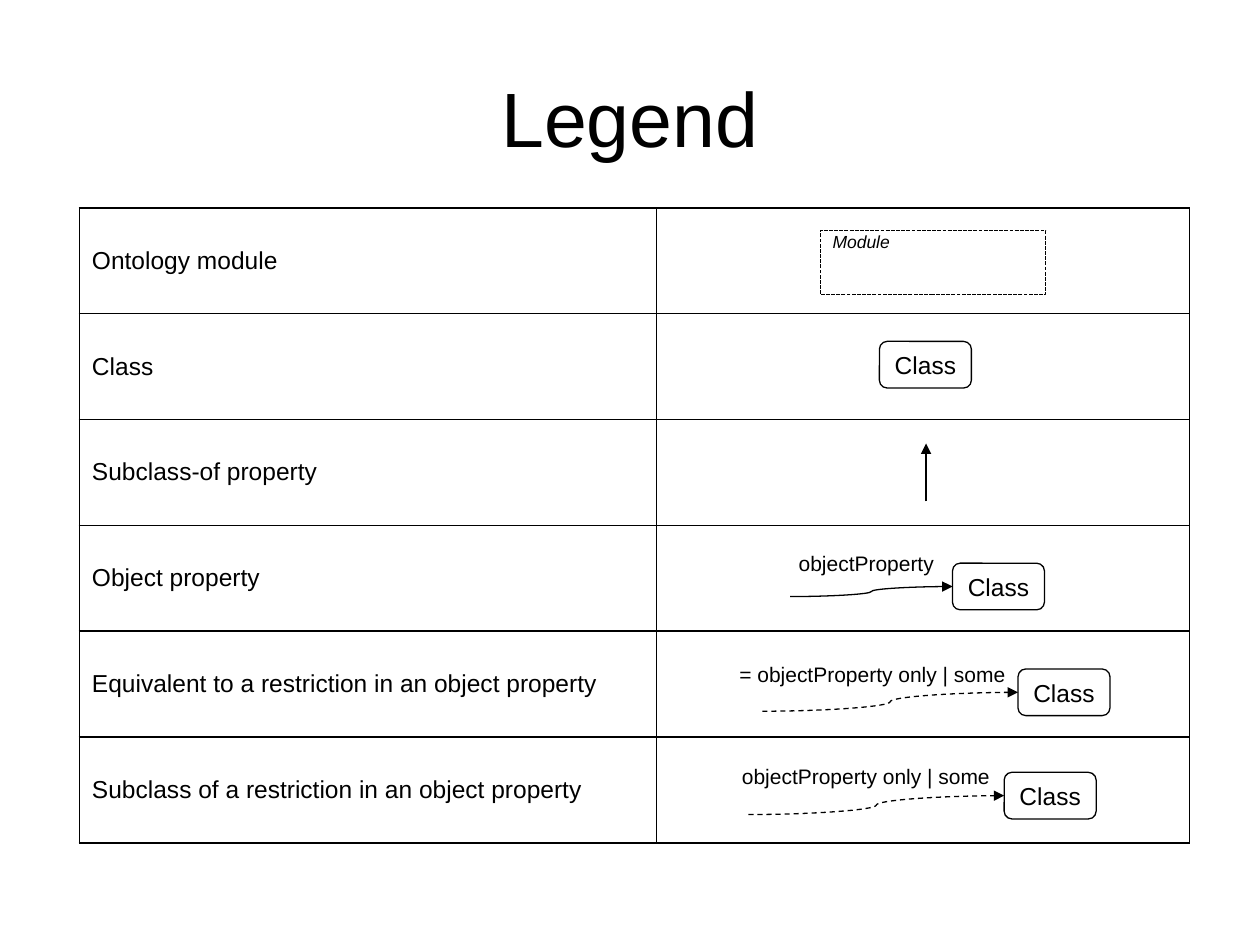
from lxml import etree
from pptx import Presentation
from pptx import util as u
from pptx.dml.color import RGBColor
from pptx.enum import dml, shapes, text
from pptx.oxml import parse_xml
from pptx.oxml.ns import nsdecls, qn

COLORS = {"ink": "000000"}
FONT = "Arial"
LEFT, TOP, ROW_H = 0.63, 1.65, 0.84
COL_W = (4.58, 4.23)
CLASS_W, CLASS_H = 0.73, 0.37
MEANINGS = (
    "Ontology module",
    "Class",
    "Subclass-of property",
    "Object property",
    "Equivalent to a restriction in an object property",
    "Subclass of a restriction in an object property",
)
# row, class x, class y in row, arrow length, arrow rise, label, label x, label y in row, label width, dash
PROPERTIES = (
    (3, 7.56, 0.3, 1.29, 0.08, "objectProperty", 6.24, 0.15, 1.29, None),
    (4, 8.08, 0.3, 2.03, 0.15, "= objectProperty only | some", 5.77, 0.19, 2.34,
     dml.MSO_LINE.DASH),
    (5, 7.97, 0.28, 2.03, 0.15, "objectProperty only | some", 5.79, 0.16, 2.24,
     dml.MSO_LINE.DASH),
)


def row_y(row, offset=0):
    return TOP + row * ROW_H + offset


def ink():
    return RGBColor.from_string(COLORS["ink"])


def inches(*values):
    return [u.Inches(v) for v in values]


def write(tf, content, size, align=None, italic=None):
    tf.text = content
    p = tf.paragraphs[0]
    p.alignment = align
    for r in p.runs:
        r.font.name = FONT
        r.font.size = u.Pt(size)
        r.font.italic = italic
        r.font.color.rgb = ink()


def style_line(line, dash=None):
    line.color.rgb = ink()
    line.width = u.Pt(0.75)
    if dash is not None:
        line.dash_style = dash


def add_outline(s, kind, x, y, w, h, dash=None):
    sp = s.shapes.add_shape(kind, *inches(x, y, w, h))
    sp.shadow.inherit = False
    sp.fill.background()
    style_line(sp.line, dash)
    return sp


def add_class(s, x, y):
    sp = add_outline(s, shapes.MSO_SHAPE.ROUNDED_RECTANGLE, x, y, CLASS_W, CLASS_H)
    tf = sp.text_frame
    tf.word_wrap = False
    tf.vertical_anchor = text.MSO_ANCHOR.MIDDLE
    write(tf, "Class", 14, text.PP_ALIGN.CENTER)
    return sp


def add_module(s, x, y, w, h):
    sp = add_outline(s, shapes.MSO_SHAPE.RECTANGLE, x, y, w, h, dml.MSO_LINE.SQUARE_DOT)
    tf = sp.text_frame
    tf.margin_top = 0
    tf.vertical_anchor = text.MSO_ANCHOR.TOP
    write(tf, "Module", 10, text.PP_ALIGN.LEFT, True)


def add_arrow(s, kind, x1, y1, x2, y2, dash=None):
    cx = s.shapes.add_connector(kind, *inches(x1, y1, x2, y2))
    style_line(cx.line, dash)
    etree.SubElement(cx.line._get_or_add_ln(), qn("a:tailEnd"), type="triangle")
    etree.SubElement(cx._element.spPr, qn("a:effectLst"))
    return cx


def add_label(s, content, size, x, y, w, h, wrap=False, align=None):
    tf = s.shapes.add_textbox(*inches(x, y, w, h)).text_frame
    tf.word_wrap = wrap
    tf.vertical_anchor = text.MSO_ANCHOR.MIDDLE if wrap else text.MSO_ANCHOR.TOP
    write(tf, content, size, align)


def add_property(s, row, x, dy, length, rise, label, lx, ldy, lw, dash):
    y = row_y(row, dy)
    mid = y + CLASS_H / 2
    sp = add_class(s, x, y)
    cx = add_arrow(s, shapes.MSO_CONNECTOR.CURVE, x - length, mid + rise, x, mid, dash)
    cx.end_connect(sp, 1)
    add_label(s, label, 12, lx, row_y(row, ldy), lw, 0.3)


def border_cell(cell):
    cell.fill.background()
    tc_pr = cell._tc.get_or_add_tcPr()
    for i, side in enumerate(("lnL", "lnR", "lnT", "lnB")):
        tc_pr.insert(i, parse_xml(
            f'<a:{side} {nsdecls("a")} w="12700"><a:solidFill>'
            f'<a:srgbClr val="{COLORS["ink"]}"/></a:solidFill></a:{side}>'))


def add_legend_table(s):
    n = len(MEANINGS)
    table = s.shapes.add_table(
        n, 2, *inches(LEFT, TOP, sum(COL_W), n * ROW_H)).table
    table.first_row = table.horz_banding = False
    for col, w in zip(table.columns, COL_W):
        col.width = u.Inches(w)
    for row, meaning in zip(table.rows, MEANINGS):
        row.height = u.Inches(ROW_H)
        for cell in row.cells:
            border_cell(cell)
            cell.vertical_anchor = text.MSO_ANCHOR.MIDDLE
        write(row.cells[0].text_frame, meaning, 14)


def main():
    prs = Presentation()
    prs.slide_width, prs.slide_height = inches(10, 7.5)
    s = prs.slides.add_slide(prs.slide_layouts[6])
    add_legend_table(s)
    add_label(s, "Legend", 44, 0.5, 0.3, 9, 1.25, True, text.PP_ALIGN.CENTER)
    add_module(s, 6.51, row_y(0, 0.18), 1.79, 0.51)
    add_class(s, 6.98, row_y(1, 0.22))
    add_arrow(s, shapes.MSO_CONNECTOR.STRAIGHT, 7.35, row_y(2, 0.65), 7.35, row_y(2, 0.19))
    for item in PROPERTIES:
        add_property(s, *item)
    prs.save("out.pptx")


if __name__ == "__main__":
    main()
